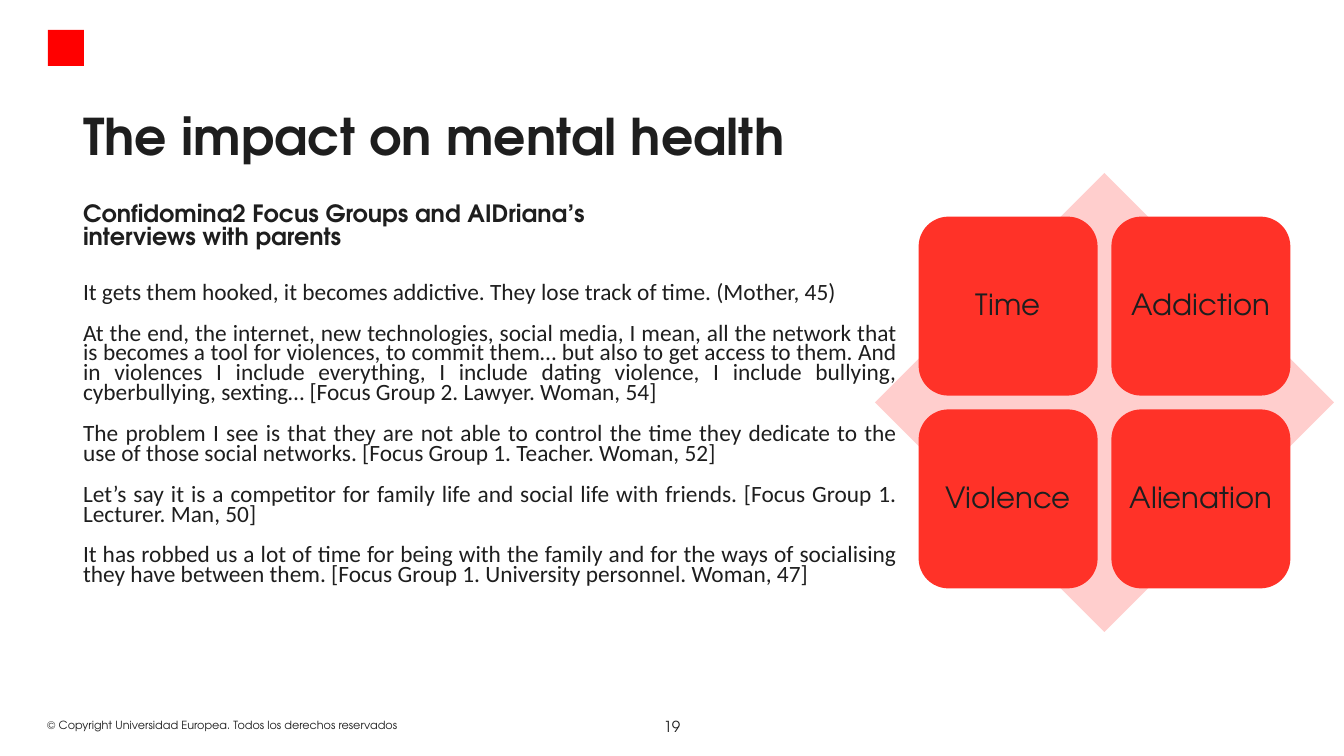
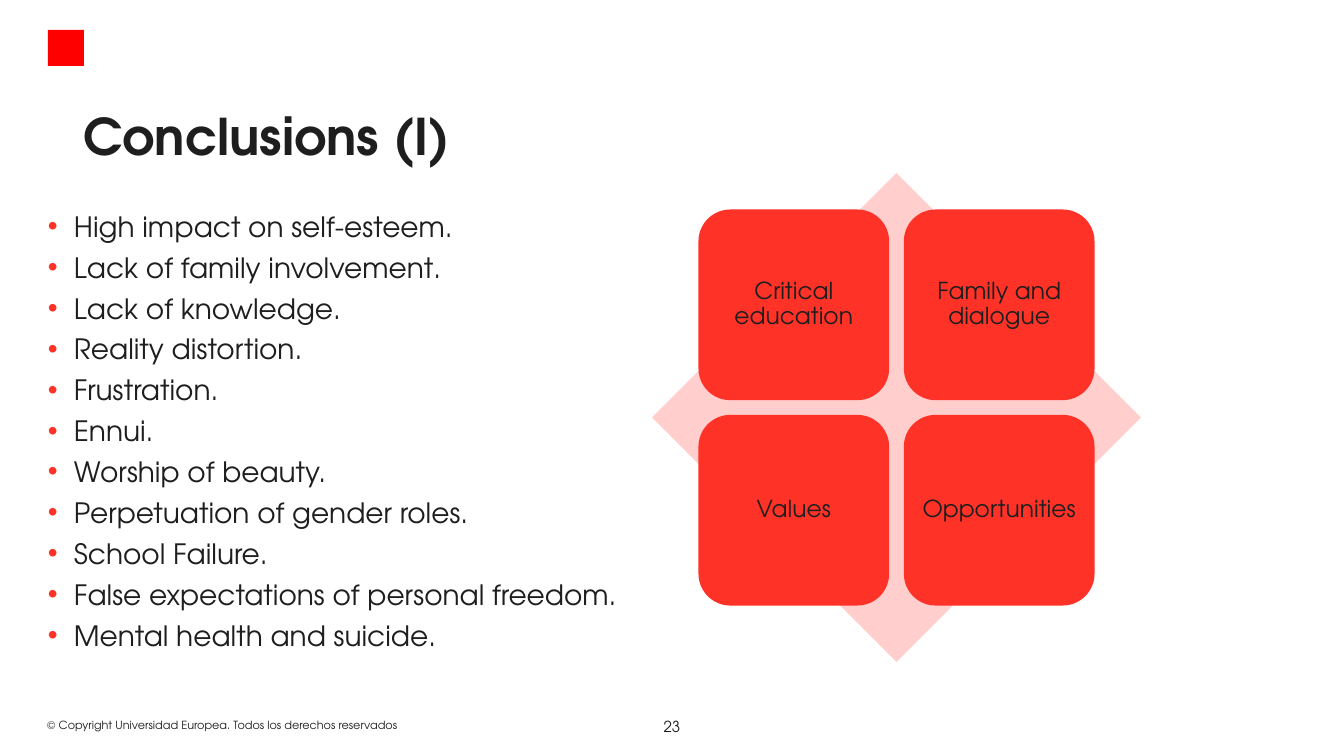
from lxml import etree
from pptx import Presentation
from pptx.dml.color import RGBColor
from pptx.enum.shapes import MSO_SHAPE
from pptx.enum.text import MSO_ANCHOR, MSO_AUTO_SIZE, PP_ALIGN
from pptx.oxml.ns import qn
from pptx.util import Emu, Pt

# Shared look
INK = RGBColor(0x1E, 0x1E, 0x1E)
LOGO_RED = RGBColor(0xFF, 0x00, 0x00)
CELL_RED = RGBColor(0xFF, 0x32, 0x28)
PALE_RED = RGBColor(0xFF, 0xCE, 0xCD)
DISPLAY, READING = "TeX Gyre Adventor", "Calibri"
LEFT, CENTER, JUSTIFY = PP_ALIGN.LEFT, PP_ALIGN.CENTER, PP_ALIGN.JUSTIFY
TOP, MIDDLE = MSO_ANCHOR.TOP, MSO_ANCHOR.MIDDLE
RECT, DIAMOND = MSO_SHAPE.RECTANGLE, MSO_SHAPE.DIAMOND
ROUNDED = MSO_SHAPE.ROUNDED_RECTANGLE
NO_FIT = MSO_AUTO_SIZE.NONE

# Lengths are px, 84 to the inch
PAGE_W, PAGE_H = 1344, 756
BULLET_INDENT = 26
COPYRIGHT = "© Copyright Universidad Europea. Todos los derechos reservados"

QUOTES = [
    "It gets them hooked, it becomes addictive. They lose track of time. (Mother, 45)",
    "At the end, the internet, new technologies, social media, I mean, all the network "
    "that is becomes a tool for violences, to commit them… but also to get access to "
    "them. And in violences I include everything, I include dating violence, I include "
    "bullying, cyberbullying, sexting… [Focus Group 2. Lawyer. Woman, 54]",
    "The problem I see is that they are not able to control the time they dedicate to "
    "the use of those social networks. [Focus Group 1. Teacher. Woman, 52]",
    "Let’s say it is a competitor for family life and social life with friends. "
    "[Focus Group 1. Lecturer. Man, 50]",
    "It has robbed us a lot of time for being with the family and for the ways of "
    "socialising they have between them. [Focus Group 1. University personnel. Woman, 47]",
]
CONCLUSIONS = [
    "High impact on self-esteem.",
    "Lack of family involvement.",
    "Lack of knowledge.",
    "Reality distortion.",
    "Frustration.",
    "Ennui.",
    "Worship of beauty.",
    "Perpetuation of gender roles.",
    "School Failure.",
    "False expectations of personal freedom.",
    "Mental health and suicide.",
]


def px(length):
    return Emu(round(length * 914400 / 84))


def set_insets(frame, left, top, right, bottom):
    frame.margin_left, frame.margin_top = px(left), px(top)
    frame.margin_right, frame.margin_bottom = px(right), px(bottom)


def set_bullet(para, color=None):
    """Give the paragraph a coloured bullet, or none without a colour."""
    props = para._p.get_or_add_pPr()
    indent = px(BULLET_INDENT) if color else 0
    props.set("marL", str(indent))
    props.set("indent", str(-indent))
    if color:
        fill = etree.SubElement(props, qn("a:buClr"))
        etree.SubElement(fill, qn("a:srgbClr")).set("val", str(color))
        etree.SubElement(props, qn("a:buChar")).set("char", "•")
    else:
        etree.SubElement(props, qn("a:buNone"))


def style(para, size, face=DISPLAY, bold=False, align=LEFT, spacing=None):
    para.alignment = align
    if spacing:
        para.line_spacing = spacing
    para.font.size, para.font.name = Pt(size), face
    para.font.bold, para.font.color.rgb = bold, INK


def fill_placeholder(holder, box, lines, size, gap=0, bullet=None, **look):
    """Place a title or body placeholder and write one paragraph per line."""
    holder.left, holder.top, holder.width, holder.height = map(px, box)
    frame = holder.text_frame
    frame.word_wrap, frame.auto_size = True, NO_FIT
    frame.vertical_anchor = TOP
    set_insets(frame, 0, 4, 8, 4)
    for index, line in enumerate(lines):
        para = frame.add_paragraph() if index else frame.paragraphs[0]
        para.text = line
        set_bullet(para, bullet)
        para.space_before = Pt(gap if index else 0)
        para.space_after = Pt(gap)
        style(para, size, **look)


def add_block(page, kind, box, color):
    block = page.shapes.add_shape(kind, *map(px, box))
    block.shadow.inherit = False
    block.fill.solid()
    block.fill.fore_color.rgb = color
    block.line.fill.background()
    return block


def add_label(page, box, text, size, align=LEFT, wrap=True):
    frame = page.shapes.add_textbox(*map(px, box)).text_frame
    frame.word_wrap = wrap
    para = frame.paragraphs[0]
    para.text = text
    style(para, size, align=align)


def add_page(deck, layout, title, number):
    """Start a slide with the title, corner square and footer."""
    page = deck.slides.add_slide(deck.slide_layouts.get_by_name(layout))
    fill_placeholder(page.shapes.title, (83, 108, 822, 65), [title], 43.3,
                     bold=True, spacing=0.9)
    add_block(page, RECT, (48, 30, 36, 36), LOGO_RED)
    add_label(page, (39, 714, 371, 22), COPYRIGHT, 9.6, wrap=False)
    add_label(page, (643, 713, 58, 36), number, 13, align=CENTER)
    return page


def add_matrix(page, left, top, side, words, size, inset, lift=0):
    """Draw a diamond with a two by two grid of cells, raised by lift."""
    add_block(page, DIAMOND, (left, top, side, side), PALE_RED)
    margin, cell, pitch = side * 0.095, side * 0.39, side * 0.42
    for index, word in enumerate(words):
        row, column = divmod(index, 2)
        box = (left + margin + column * pitch,
               top + margin - lift + row * pitch, cell, cell)
        frame = add_block(page, ROUNDED, box, CELL_RED).text_frame
        frame.word_wrap, frame.vertical_anchor = True, MIDDLE
        set_insets(frame, inset, inset, inset, inset)
        para = frame.paragraphs[0]
        para.text = word
        style(para, size, align=CENTER, spacing=0.9)


def build_impact(deck):
    page = add_page(deck, "Two Content", "The impact on mental health", "19")
    fill_placeholder(page.placeholders[1], (83, 200, 617, 55),
                     ["Confidomina2 Focus Groups and AIDriana’s interviews with parents"],
                     20.4, bold=True, spacing=0.8)
    fill_placeholder(page.placeholders[2], (83, 281, 822, 418), QUOTES, 20, gap=9,
                     face=READING, align=JUSTIFY, spacing=Pt(17))
    add_matrix(page, 875, 173, 459,
               ["Time", "Addiction", "Violence", "Alienation"], 25, inset=8)


def build_conclusions(deck):
    page = add_page(deck, "Title and Content", "Conclusions (I)", "23")
    fill_placeholder(page.placeholders[1], (48, 219, 822, 418), CONCLUSIONS, 24, gap=9,
                     bullet=CELL_RED, spacing=Pt(17))
    add_matrix(page, 652, 173, 489,
               ["Critical education", "Family and dialogue", "Values", "Opportunities"],
               20, inset=7, lift=10)


def main():
    deck = Presentation()
    deck.slide_width, deck.slide_height = px(PAGE_W), px(PAGE_H)
    build_impact(deck)
    build_conclusions(deck)
    deck.save("out.pptx")


if __name__ == "__main__":
    main()
